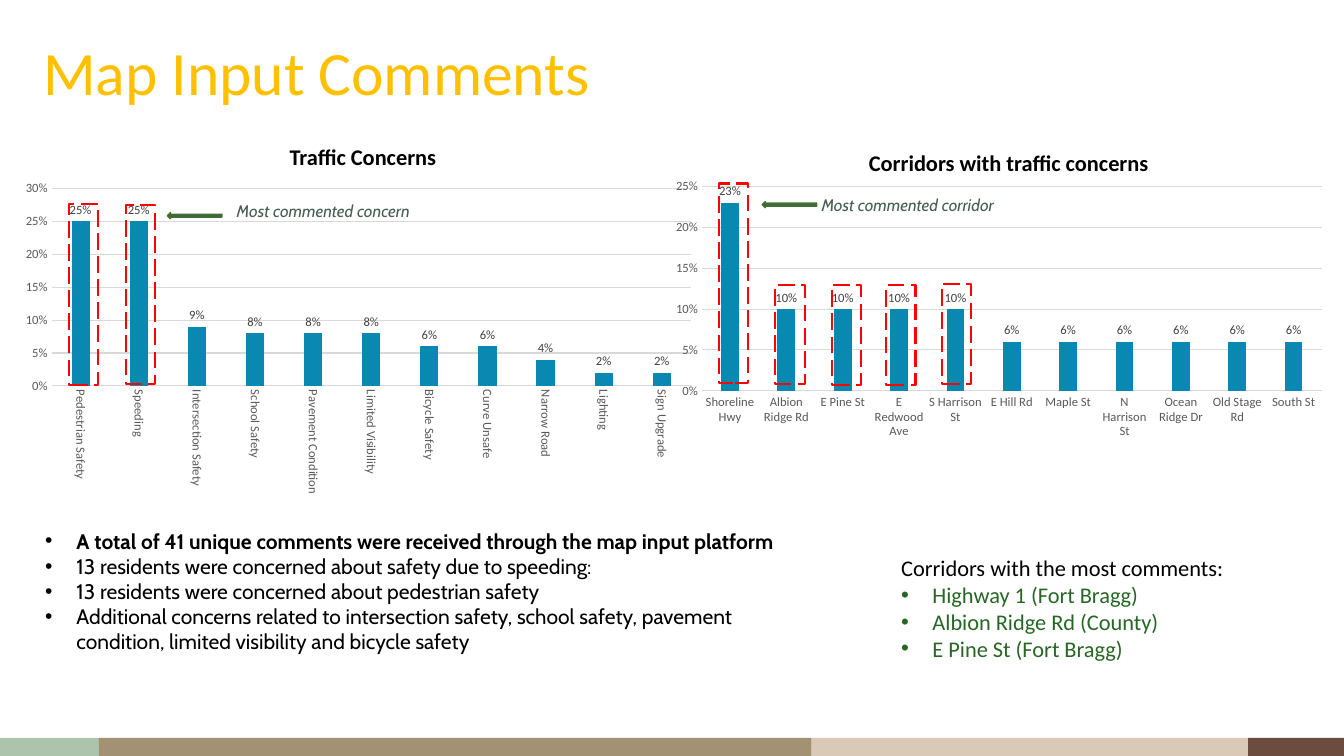
from lxml import etree
from pptx import Presentation
from pptx.chart.data import CategoryChartData
from pptx.dml.color import RGBColor
from pptx.enum.chart import XL_CHART_TYPE as CT, XL_LABEL_POSITION as LP, XL_TICK_MARK as TM
from pptx.enum.dml import MSO_LINE
from pptx.enum.shapes import MSO_SHAPE as MS
from pptx.enum.text import MSO_ANCHOR as MA, PP_ALIGN as PA
from pptx.oxml import parse_xml
from pptx.oxml.ns import nsdecls, qn
from pptx.util import Inches, Pt


def color(hex_text):
    return RGBColor.from_string(hex_text)


def add_text(box, lines, size, font="Calibri", fill="000000", bold=False,
             italic=False, align=PA.LEFT, anchor=MA.TOP, spacing=None):
    tf = s.shapes.add_textbox(*map(Inches, box)).text_frame
    tf.word_wrap = True
    tf.vertical_anchor = anchor
    for i, (text, opts) in enumerate(lines):
        p = tf.paragraphs[0] if i == 0 else tf.add_paragraph()
        p.alignment = align
        if spacing:
            p.line_spacing = spacing
        if opts.get("bullet"):
            pPr = p._p.get_or_add_pPr()
            pPr.set("marL", str(Inches(0.31)))
            pPr.set("indent", str(-Inches(0.31)))
            etree.SubElement(pPr, qn("a:buFont")).set("typeface", "Arial")
            etree.SubElement(pPr, qn("a:buChar")).set("char", "•")
        r = p.add_run()
        r.text = text
        r.font.name = font
        r.font.size = Pt(size)
        r.font.bold = opts.get("bold", bold)
        r.font.italic = italic
        r.font.color.rgb = color(opts.get("fill", fill))


prs = Presentation()
prs.slide_width, prs.slide_height = Inches(13.33), Inches(7.5)
s = prs.slides.add_slide(prs.slide_layouts[6])

footer_x = 0
for width, fill in [(0.98, "ACC4AC"), (7.07, "A29172"), (4.33, "DBC9B7"), (0.95, "6C4C3E")]:
    sp = s.shapes.add_shape(MS.RECTANGLE, Inches(footer_x), Inches(7.32), Inches(width), Inches(0.18))
    sp.shadow.inherit = False
    sp.fill.solid()
    sp.fill.fore_color.rgb = color(fill)
    sp.line.fill.background()
    footer_x += width

concerns = {
    "Pedestrian Safety": 0.25, "Speeding": 0.25, "Intersection Safety": 0.09,
    "School Safety": 0.08, "Pavement Condition": 0.08, "Limited Visibility": 0.08,
    "Bicycle Safety": 0.06, "Curve Unsafe": 0.06, "Narrow Road": 0.04,
    "Lighting": 0.02, "Sign Upgrade": 0.02,
}
corridors = {
    "Shoreline Hwy": 0.23, "Albion Ridge Rd": 0.1, "E Pine St": 0.1,
    "E Redwood Ave": 0.1, "S Harrison St": 0.1, "E Hill Rd": 0.06,
    "Maple St": 0.06, "N Harrison St": 0.06, "Ocean Ridge Dr": 0.06,
    "Old Stage Rd": 0.06, "South St": 0.06,
}
charts = [
    (concerns, (0.12, 1.74, 6.87, 3.26), (0.51, 1.87, 6.34, 1.96), 0.3, 90),
    (corridors, (6.58, 1.73, 6.67, 2.68), (6.96, 1.85, 6.15, 2.03), 0.25, 0),
]
for shares, box, plot_box, top_value, label_angle in charts:
    data = CategoryChartData(number_format="0%")
    data.categories = list(shares)
    data.add_series("Series 1", list(shares.values()))
    chart = s.shapes.add_chart(CT.COLUMN_CLUSTERED, *map(Inches, box), data).chart
    chart.has_legend = False
    chart.has_title = False
    chart.font.name = "Calibri"
    chart.font.size = Pt(10)
    chart.font.color.rgb = color("000000")

    left, top, width, height = box
    px, py, pw, ph = plot_box
    parts = {"x": (px - left) / width, "y": (py - top) / height, "w": pw / width, "h": ph / height}
    modes = "".join(f'<c:{k}Mode val="edge"/>' for k in "xy")
    sizes = "".join(f'<c:{k} val="{v:.3f}"/>' for k, v in parts.items())
    plot_area = chart._chartSpace.chart.plotArea
    for old in plot_area.findall(qn("c:layout")):
        plot_area.remove(old)
    plot_area.insert(0, parse_xml(
        f'<c:layout {nsdecls("c")}><c:manualLayout><c:layoutTarget val="inner"/>'
        f'{modes}{sizes}</c:manualLayout></c:layout>'))

    cat, val = chart.category_axis, chart.value_axis
    for axis in (cat, val):
        axis.major_tick_mark = axis.minor_tick_mark = TM.NONE
        font = axis.tick_labels.font
        font.name, font.size = "Calibri", Pt(9)
        font.color.rgb = color("595959")
    val.minimum_scale, val.maximum_scale, val.major_unit = 0, top_value, 0.05
    val.tick_labels.number_format = "0%"
    val.tick_labels.number_format_is_linked = False
    val.format.line.fill.background()
    for line in (cat.format.line, val.major_gridlines.format.line):
        line.color.rgb = color("D9D9D9")
        line.width = Pt(0.75)
    body = cat._element.find(qn("c:txPr")).find(qn("a:bodyPr"))
    body.set("rot", str(label_angle * 60000))
    body.set("vert", "horz")

    plot = chart.plots[0]
    plot.gap_width, plot.overlap, plot.vary_by_categories = 219, -27, False
    fill = plot.series[0].format.fill
    fill.solid()
    fill.fore_color.rgb = color("0989B1")
    plot.has_data_labels = True
    labels = plot.data_labels
    labels.show_value = True
    labels.position = LP.OUTSIDE_END
    labels.number_format, labels.number_format_is_linked = "0%", False
    labels.font.name, labels.font.size = "Calibri", Pt(9)
    labels.font.color.rgb = color("404040")

highlights = [
    (0.68, 2.02, 1.8), (1.25, 2.03, 1.78), (7.13, 1.82, 1.98), (7.69, 2.83, 0.98),
    (8.25, 2.83, 0.99), (8.79, 2.83, 0.99), (9.34, 2.82, 0.99),
]
for x, y, height in highlights:
    sp = s.shapes.add_shape(MS.RECTANGLE, Inches(x), Inches(y), Inches(0.29), Inches(height))
    sp.shadow.inherit = False
    sp.fill.background()
    sp.line.color.rgb = color("FD0200")
    sp.line.width = Pt(1.5)
    sp.line.dash_style = MSO_LINE.LONG_DASH

callouts = [
    (1.66, 2.11, 2.25, 1.94, "Most commented concern"),
    (7.56, 2, 8.05, 1.88, "Most commented corridor"),
]
for arrow_x, arrow_y, text_x, text_y, text in callouts:
    sp = s.shapes.add_shape(MS.RIGHT_ARROW, Inches(arrow_x), Inches(arrow_y), Inches(0.54), Inches(0.06))
    sp.rotation = 180
    sp.shadow.inherit = False
    sp.fill.solid()
    sp.fill.fore_color.rgb = color("455F51")
    sp.line.color.rgb = color("3E752A")
    sp.line.width = Pt(1)
    add_text((text_x, text_y, 2.14, 0.3), [(text, {})], 12, font="Cabin", fill="455F51", italic=True)

add_text((0.33, 0.02, 9.13, 1.45), [("Map Input Comments", {})], 44,
         fill="FFC000", anchor=MA.MIDDLE, spacing=0.9)
add_text((0.93, 1.37, 5.34, 0.37), [("Traffic Concerns", {})], 16, bold=True, align=PA.CENTER)
add_text((7.26, 1.43, 5.49, 0.37), [("Corridors with traffic concerns", {})], 16,
         bold=True, align=PA.CENTER)

bullet = {"bullet": True}
green = {"bullet": True, "fill": "276624"}
add_text((0.35, 5.19, 7.65, 1.62), [
    ("A total of 41 unique comments were received through the map input platform",
     {"bullet": True, "bold": True}),
    ("13 residents were concerned about safety due to speeding:", bullet),
    ("13 residents were concerned about pedestrian safety", bullet),
    ("Additional concerns related to intersection safety, school safety, pavement condition, "
     "limited visibility and bicycle safety", bullet),
], 15, font="Cabin")
add_text((8.84, 5.45, 3.72, 1.18), [
    ("Corridors with the most comments:", {}),
    ("Highway 1 (Fort Bragg)", green),
    ("Albion Ridge Rd (County)", green),
    ("E Pine St (Fort Bragg)", green),
], 16)

prs.save("out.pptx")
